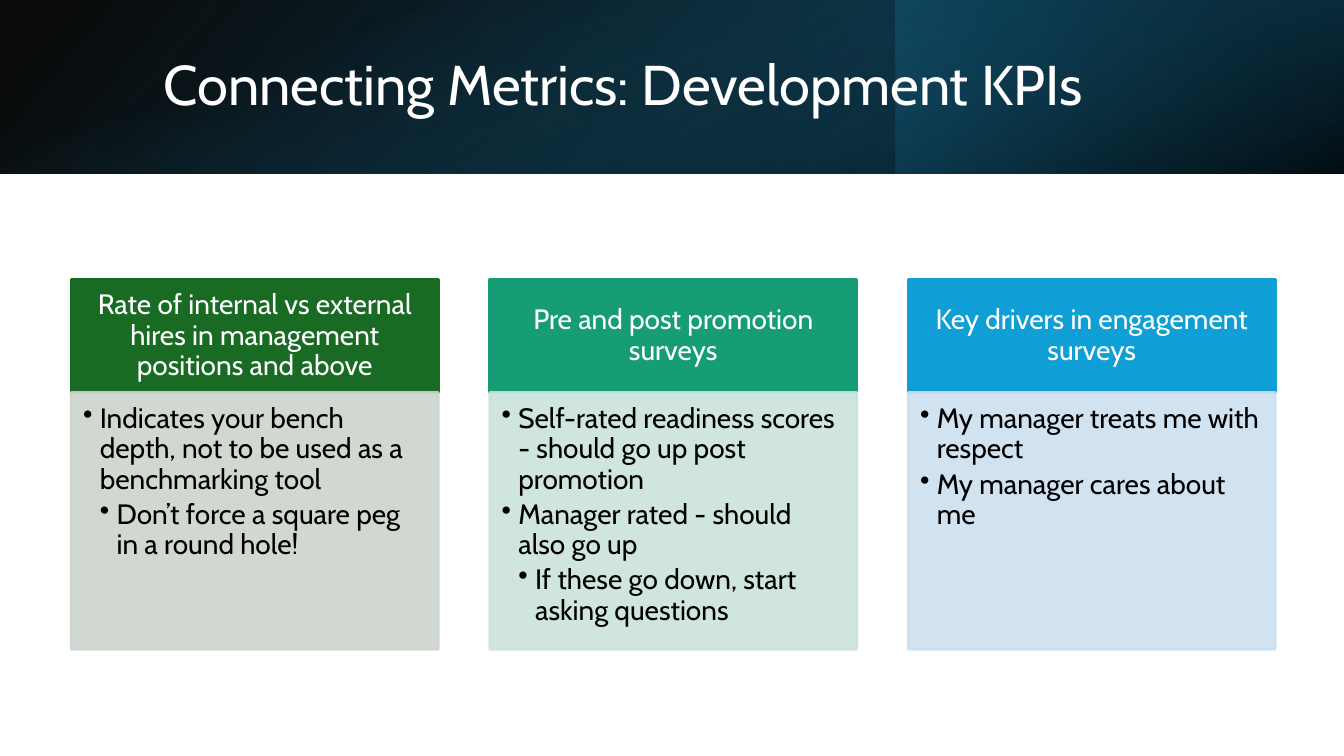
from lxml import etree
from pptx import Presentation
from pptx.dml.color import RGBColor
from pptx.enum.shapes import MSO_SHAPE
from pptx.enum.text import MSO_ANCHOR, PP_ALIGN
from pptx.oxml import parse_xml
from pptx.oxml.ns import nsdecls, qn
from pptx.util import Pt

RECTANGLE = MSO_SHAPE.RECTANGLE
TOP, MIDDLE = MSO_ANCHOR.TOP, MSO_ANCHOR.MIDDLE
LEFT, CENTER = PP_ALIGN.LEFT, PP_ALIGN.CENTER

FONT = "Cabin"
BLACK = RGBColor(0x00, 0x00, 0x00)
WHITE = RGBColor(0xFF, 0xFF, 0xFF)
NAVY = RGBColor(0x10, 0x48, 0x62)
DARK_TEAL = RGBColor(0x0B, 0x30, 0x41)
TEAL = RGBColor(0x15, 0x60, 0x82)
GREEN = RGBColor(0x19, 0x6B, 0x24)
PALE_GREEN = RGBColor(0xCC, 0xD4, 0xCD)
JADE = RGBColor(0x17, 0x9D, 0x76)
PALE_JADE = RGBColor(0xCB, 0xE3, 0xDD)
BLUE = RGBColor(0x0F, 0x9E, 0xD5)
PALE_BLUE = RGBColor(0xCC, 0xDF, 0xEF)

# Content: heading, heading colour, body colour, bullets as (level, text)
TITLE = "Connecting Metrics: Development KPIs"
COLUMNS = [
    ("Rate of internal vs external hires in management positions and above",
     GREEN, PALE_GREEN,
     [(1, "Indicates your bench depth, not to be used as a benchmarking tool"),
      (2, "Don’t force a square peg in a round hole!")]),
    ("Pre and post promotion surveys", JADE, PALE_JADE,
     [(1, "Self-rated readiness scores - should go up post promotion"),
      (1, "Manager rated - should also go up"),
      (2, "If these go down, start asking questions")]),
    ("Key drivers in engagement surveys", BLUE, PALE_BLUE,
     [(1, "My manager treats me with respect"),
      (1, "My manager cares about me")]),
]

# Layout in points
SLIDE_WIDTH, SLIDE_HEIGHT = 720, 405
BANNER_HEIGHT = 93
COLUMN_LEFT, COLUMN_WIDTH, COLUMN_PITCH = 38.2, 196.6, 224.2
HEADING_TOP, HEADING_HEIGHT, BODY_HEIGHT = 149.8, 60.5, 137.5
BULLET_INDENT = 9

# Banner layers: box, rotation, flipped, angle, stops as (position, colour, opacity)
BANNER_LAYERS = [
    ((0, 0, SLIDE_WIDTH, BANNER_HEIGHT), 0, True, 140,
     [(0, BLACK, 96), (100, NAVY, 100)]),
    ((SLIDE_WIDTH * 2 / 3, 0, SLIDE_WIDTH / 3, BANNER_HEIGHT), 180, False, 320,
     [(19, DARK_TEAL, 68), (100, TEAL, 79)]),
    (((SLIDE_WIDTH - BANNER_HEIGHT) / 2, (BANNER_HEIGHT - SLIDE_WIDTH) / 2,
      BANNER_HEIGHT, SLIDE_WIDTH), 90, False, 340,
     [(23, TEAL, 0), (99, BLACK, 74)]),
]


def add_rectangle(slide, box):
    shape = slide.shapes.add_shape(RECTANGLE, *map(Pt, box))
    shape.shadow.inherit = False
    return shape


def add_banner_layer(slide, box, rotation, flipped, angle, stops):
    shape = add_rectangle(slide, box)
    shape.rotation = rotation
    shape.line.fill.background()
    properties = shape._element.spPr
    if flipped:
        properties.find(qn("a:xfrm")).set("flipH", "1")
    stop_xml = "".join(
        f'<a:gs pos="{position * 1000}"><a:srgbClr val="{color}">'
        f'<a:alpha val="{opacity * 1000}"/></a:srgbClr></a:gs>'
        for position, color, opacity in stops)
    gradient = parse_xml(
        f'<a:gradFill {nsdecls("a")} rotWithShape="1"><a:gsLst>{stop_xml}</a:gsLst>'
        f'<a:lin ang="{angle * 60000}" scaled="0"/></a:gradFill>')
    properties.find(qn("a:prstGeom")).addnext(gradient)


def add_panel(slide, box, color, opacity=100):
    shape = add_rectangle(slide, box)
    shape.line.width = Pt(1.5)
    for fill in (shape.fill, shape.line.fill):
        fill.solid()
        fill.fore_color.rgb = color
    if opacity < 100:
        for color_element in shape._element.spPr.iter(qn("a:srgbClr")):
            etree.SubElement(color_element, qn("a:alpha"), val=str(opacity * 1000))
    return shape


def set_frame(shape, anchor, margins):
    frame = shape.text_frame
    frame.word_wrap = True
    frame.vertical_anchor = anchor
    (frame.margin_left, frame.margin_top,
     frame.margin_right, frame.margin_bottom) = map(Pt, margins)
    return frame


def write(paragraph, text, size, color, alignment):
    paragraph.alignment = alignment
    paragraph.line_spacing = 0.9
    run = paragraph.add_run()
    run.text = text
    run.font.name = FONT
    run.font.size = Pt(size)
    run.font.color.rgb = color


def add_bullet(paragraph, level):
    paragraph.level = level
    paragraph.space_after = Pt(2.7)
    properties = paragraph._p.get_or_add_pPr()
    properties.set("marL", str(Pt(BULLET_INDENT * level)))
    properties.set("indent", str(-Pt(BULLET_INDENT)))
    etree.SubElement(properties, qn("a:buChar"), char="•")


presentation = Presentation()
presentation.slide_width = Pt(SLIDE_WIDTH)
presentation.slide_height = Pt(SLIDE_HEIGHT)
slide = presentation.slides.add_slide(presentation.slide_layouts[6])

# Banner and title
for layer in BANNER_LAYERS:
    add_banner_layer(slide, *layer)
title = slide.shapes.add_textbox(Pt(80.6), Pt(20.9), Pt(593.3), Pt(51.8))
title_frame = set_frame(title, MIDDLE, (7.2, 3.6, 7.2, 3.6))
write(title_frame.paragraphs[0], TITLE, 30, WHITE, LEFT)

# Columns: a heading over a bulleted body
for index, (heading, heading_color, body_color, bullets) in enumerate(COLUMNS):
    left = COLUMN_LEFT + index * COLUMN_PITCH
    heading_panel = add_panel(
        slide, (left, HEADING_TOP, COLUMN_WIDTH, HEADING_HEIGHT), heading_color)
    heading_frame = set_frame(heading_panel, MIDDLE, (8.4, 4.8, 8.4, 4.8))
    write(heading_frame.paragraphs[0], heading, 15, WHITE, CENTER)

    body_panel = add_panel(
        slide, (left, HEADING_TOP + HEADING_HEIGHT, COLUMN_WIDTH, BODY_HEIGHT),
        body_color, opacity=90)
    body_frame = set_frame(body_panel, TOP, (6.3, 6.3, 8.4, 9.45))
    for number, (level, text) in enumerate(bullets):
        paragraph = body_frame.add_paragraph() if number else body_frame.paragraphs[0]
        write(paragraph, text, 15, BLACK, LEFT)
        add_bullet(paragraph, level)

presentation.save("out.pptx")
